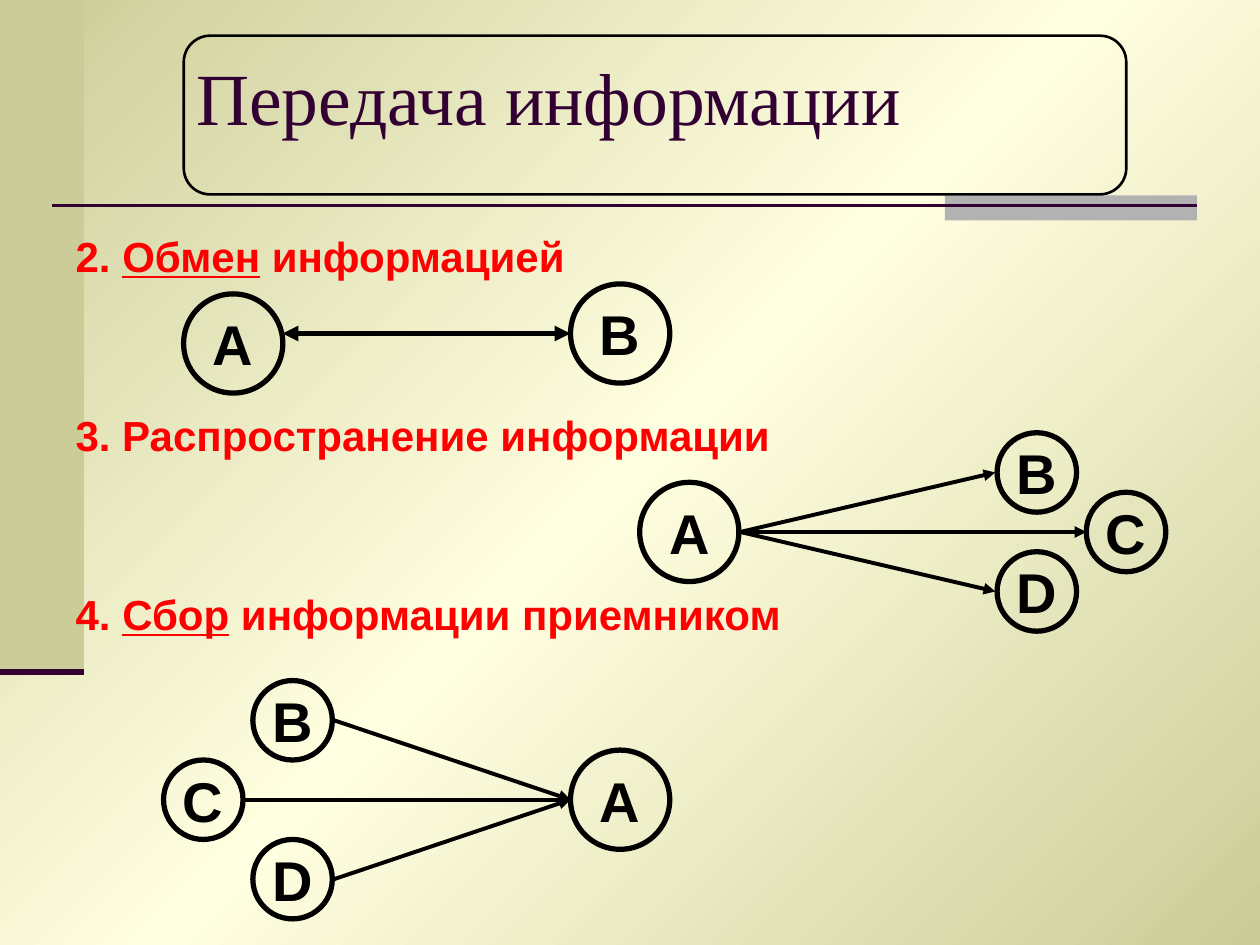
"""Build a slide on the exchange, spread and gathering of information."""
from copy import deepcopy

from lxml import etree
from pptx import Presentation
from pptx.dml.color import RGBColor
from pptx.enum import shapes, text
from pptx.oxml import ns
from pptx.util import Pt

BLACK, PLUM, RED = "000000", "330033", "FF0000"
SAND, CREAM, GREY = "CCCC99", "FFFFE1", "B2B2B2"
BIG, SMALL = 56.7, 45.4
KIND = shapes.MSO_SHAPE


def tint(code):
    return RGBColor.from_string(code)


class Deck:
    def __init__(self, wide, high):
        self.prs = Presentation()
        self.prs.slide_width, self.prs.slide_height = Pt(wide), Pt(high)
        self.slide = self.prs.slides.add_slide(self.prs.slide_layouts[1])
        self.items = self.slide.shapes

    def backdrop(self, edge, mid):
        fill = self.slide.background.fill
        fill.gradient()
        fill.gradient_angle = 315
        first = next(self.slide.element.iter(ns.qn("a:gs")))
        first.addnext(deepcopy(first))
        for stop, code, pos in zip(fill.gradient_stops, (edge, mid, edge), (0, 0.5, 1)):
            stop.color.rgb = tint(code)
            stop.position = pos

    def shape(self, kind, left, top, wide, high, fill=None, width=0):
        item = self.items.add_shape(kind, Pt(left), Pt(top), Pt(wide), Pt(high))
        item.shadow.inherit = False
        if fill:
            item.fill.solid()
            item.fill.fore_color.rgb = tint(fill)
        else:
            item.fill.background()
        if width:
            item.line.color.rgb = tint(BLACK)
            item.line.width = Pt(width)
        else:
            item.line.fill.background()
        return item

    def line(self, start, end, width=2.25, color=BLACK, heads=("tailEnd",)):
        ends = [Pt(n) for n in (*start, *end)]
        item = self.items.add_connector(shapes.MSO_CONNECTOR.STRAIGHT, *ends)
        item.line.width = Pt(width)
        item.line.color.rgb = tint(color)
        stroke = item.line._get_or_add_ln()
        for head in heads:
            etree.SubElement(stroke, ns.qn("a:" + head)).set("type", "triangle")
        etree.SubElement(item.element.spPr, ns.qn("a:effectLst"))

    def font(self, run, size, color, name="Arial", bold=True):
        run.font.name, run.font.bold = name, bold
        run.font.size = Pt(size)
        run.font.color.rgb = tint(color)

    def node(self, label, x, y, size):
        item = self.shape(KIND.OVAL, x - size / 2, y - size / 2, size, size, width=3)
        frame = item.text_frame
        frame.word_wrap = False
        frame.vertical_anchor = text.MSO_ANCHOR.MIDDLE
        frame.text = label
        para = frame.paragraphs[0]
        para.alignment = text.PP_ALIGN.CENTER
        self.font(para.runs[0], 32, BLACK)

    def place(self, holder, left, top, wide, high):
        holder.left, holder.top = Pt(left), Pt(top)
        holder.width, holder.height = Pt(wide), Pt(high)
        holder.element.getparent().append(holder.element)
        frame = holder.text_frame
        frame.auto_size = text.MSO_AUTO_SIZE.NONE
        frame.vertical_anchor = text.MSO_ANCHOR.TOP
        frame.word_wrap = True
        return frame

    def title(self, words, *box):
        frame = self.place(self.items.title, *box)
        frame.margin_top = Pt(8)
        frame.text = words
        para = frame.paragraphs[0]
        para.alignment = text.PP_ALIGN.LEFT
        self.font(para.runs[0], 42, PLUM, "Times New Roman", False)

    def body(self, rows, gap, *box):
        frame = self.place(self.slide.placeholders[1], *box)
        for i, (number, key, rest) in enumerate(rows):
            para = frame.add_paragraph() if i else frame.paragraphs[0]
            props = para._p.get_or_add_pPr()
            props.set("marL", str(Pt(27)))
            props.set("indent", str(Pt(-27)))
            etree.SubElement(props, ns.qn("a:buNone"))
            para.space_before = Pt(gap if i else 0)
            for part in filter(None, (number, key, rest)):
                run = para.add_run()
                run.text = part
                self.font(run, 24, RED)
                run.font.underline = part == key


def main():
    deck = Deck(720, 540)
    deck.backdrop(SAND, CREAM)
    deck.shape(KIND.RECTANGLE, 0, 0, 48, 384, SAND)
    deck.shape(KIND.RECTANGLE, 540, 111.6, 144, 14.4, GREY)
    deck.line((30, 117.5), (684, 117.5), 1.5, PLUM, ())
    deck.line((0, 384), (48, 384), 3.5, PLUM, ())

    deck.title("Передача информации", 105, 21.6, 538.6, 89.3)
    rows = [("2. ", "Обмен", " информацией"),
            ("3. ", "", "Распространение информации"),
            ("4. ", "Сбор", " информации приемником")]
    deck.body(rows, 73.5, 36, 128, 641.5, 369)
    deck.shape(KIND.ROUNDED_RECTANGLE, 105, 20.4, 538.6, 90.7, width=1.5)

    deck.node("А", 133.3, 196.3, BIG)
    deck.node("В", 354.4, 190.6, BIG)
    deck.line((161.5, 190.6), (326, 190.6), 3, heads=("headEnd", "tailEnd"))

    mid, step = 304, 34
    deck.node("А", 393.9, mid, BIG)
    for label, x, side in (("В", 592.5, -1), ("C", 643.5, 0), ("D", 592.5, 1)):
        y = mid + side * step
        deck.node(label, x, y, SMALL)
        deck.line((423, mid), (x - SMALL / 2 - abs(side), y))

    mid, step = 457, 45.4
    deck.node("А", 354.4, mid, BIG)
    for label, x, side in (("В", 167.2, -1), ("C", 116.2, 0), ("D", 167.2, 1)):
        y = mid + side * step
        deck.node(label, x, y, SMALL)
        deck.line((x + SMALL / 2 + abs(side), y), (326, mid))

    deck.prs.save("out.pptx")


if __name__ == "__main__":
    main()
